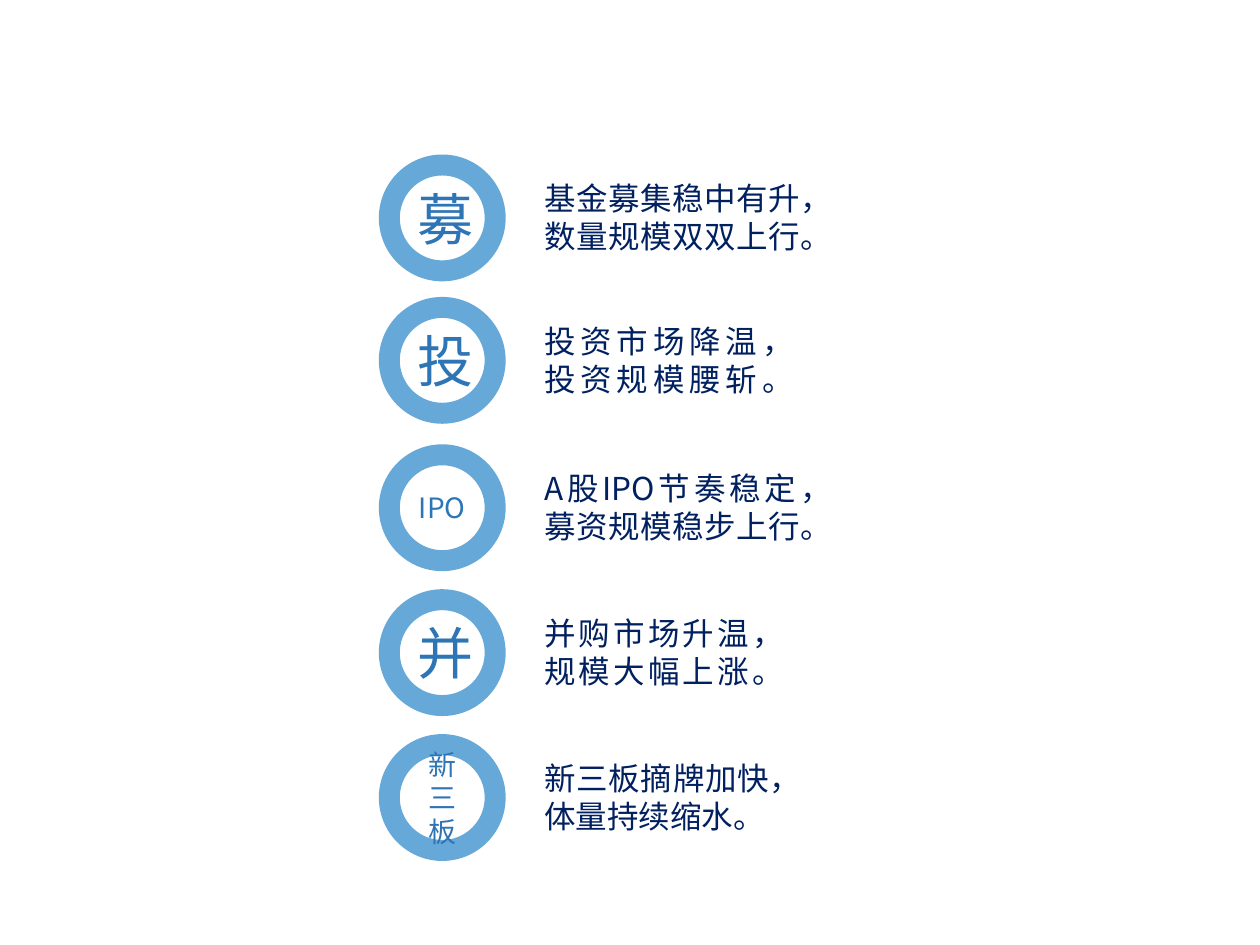
from dataclasses import dataclass

from lxml import etree
from pptx import Presentation
from pptx.dml.color import RGBColor
from pptx.enum.shapes import MSO_SHAPE
from pptx.enum.text import MSO_ANCHOR, PP_ALIGN
from pptx.oxml.ns import qn
from pptx.util import Inches, Pt

OVAL = MSO_SHAPE.OVAL
MIDDLE = MSO_ANCHOR.MIDDLE
CENTER = PP_ALIGN.CENTER
JUSTIFY = PP_ALIGN.JUSTIFY


@dataclass(frozen=True)
class Theme:
    ring: RGBColor = RGBColor(0x00, 0x70, 0xC0)
    ring_alpha: int = 60000
    ring_width: int = 12
    label: RGBColor = RGBColor(0x2E, 0x75, 0xB6)
    body: RGBColor = RGBColor(0x00, 0x20, 0x60)
    label_font: str = "Noto Sans CJK JP"
    body_font: str = "Noto Sans CJK SC"
    single_size: int = 32
    word_size: int = 16
    body_size: int = 18
    leading: float = 1.2


THEME = Theme()
RING_LEFT = 3.09
RING_SIZE = 0.84
TEXT_LEFT = 4.22
TEXT_HEIGHT = 0.71
TOPICS = [
    (1.31, "募", 2.23, ["基金募集稳中有升，", "数量规模双双上行。"]),
    (2.44, "投", 1.93, ["投资市场降温，", "投资规模腰斩。"]),
    (3.61, "IPO", 2.23, ["A股IPO节奏稳定，", "募资规模稳步上行。"]),
    (4.76, "并", 1.85, ["并购市场升温，", "规模大幅上涨。"]),
    (5.91, "新三板", 1.99, ["新三板摘牌加快，", "体量持续缩水。"]),
]


def write_para(para, text, size, name, color, alignment):
    para.text = text
    para.alignment = alignment
    para.line_spacing = Pt(size * THEME.leading)
    para.font.size = Pt(size)
    para.font.name = name
    para.font.color.rgb = color
    properties = para._p.pPr
    properties.set("hangingPunct", "1")
    east_asian = etree.SubElement(properties.find(qn("a:defRPr")), qn("a:ea"))
    east_asian.set("typeface", name)


def add_ring(page, left, top, size, label):
    ring = page.shapes.add_shape(
        OVAL, Inches(left), Inches(top), Inches(size), Inches(size)
    )
    ring.shadow.inherit = False
    ring.fill.background()
    ring.line.width = Pt(THEME.ring_width)
    ring.line.color.rgb = THEME.ring
    color = ring.line._ln.find(".//" + qn("a:srgbClr"))
    etree.SubElement(color, qn("a:alpha")).set("val", str(THEME.ring_alpha))
    frame = ring.text_frame
    frame.word_wrap = True
    frame.vertical_anchor = MIDDLE
    label_size = THEME.single_size if len(label) == 1 else THEME.word_size
    write_para(
        frame.paragraphs[0], label, label_size, THEME.label_font, THEME.label, CENTER
    )


def add_summary(page, left, top, width, height, lines):
    box = page.shapes.add_textbox(
        Inches(left), Inches(top), Inches(width), Inches(height)
    )
    frame = box.text_frame
    frame.word_wrap = True
    for index, line in enumerate(lines):
        para = frame.add_paragraph() if index else frame.paragraphs[0]
        write_para(
            para, line, THEME.body_size, THEME.body_font, THEME.body, JUSTIFY
        )


def add_topic(page, top, label, width, lines):
    add_ring(page, RING_LEFT, top, RING_SIZE, label)
    text_top = top + (RING_SIZE - TEXT_HEIGHT) / 2
    add_summary(page, TEXT_LEFT, text_top, width, TEXT_HEIGHT, lines)


def main():
    deck = Presentation()
    deck.slide_width = Inches(10)
    deck.slide_height = Inches(7.5)
    page = deck.slides.add_slide(deck.slide_layouts[6])
    for topic in TOPICS:
        add_topic(page, *topic)
    deck.save("out.pptx")


if __name__ == "__main__":
    main()
